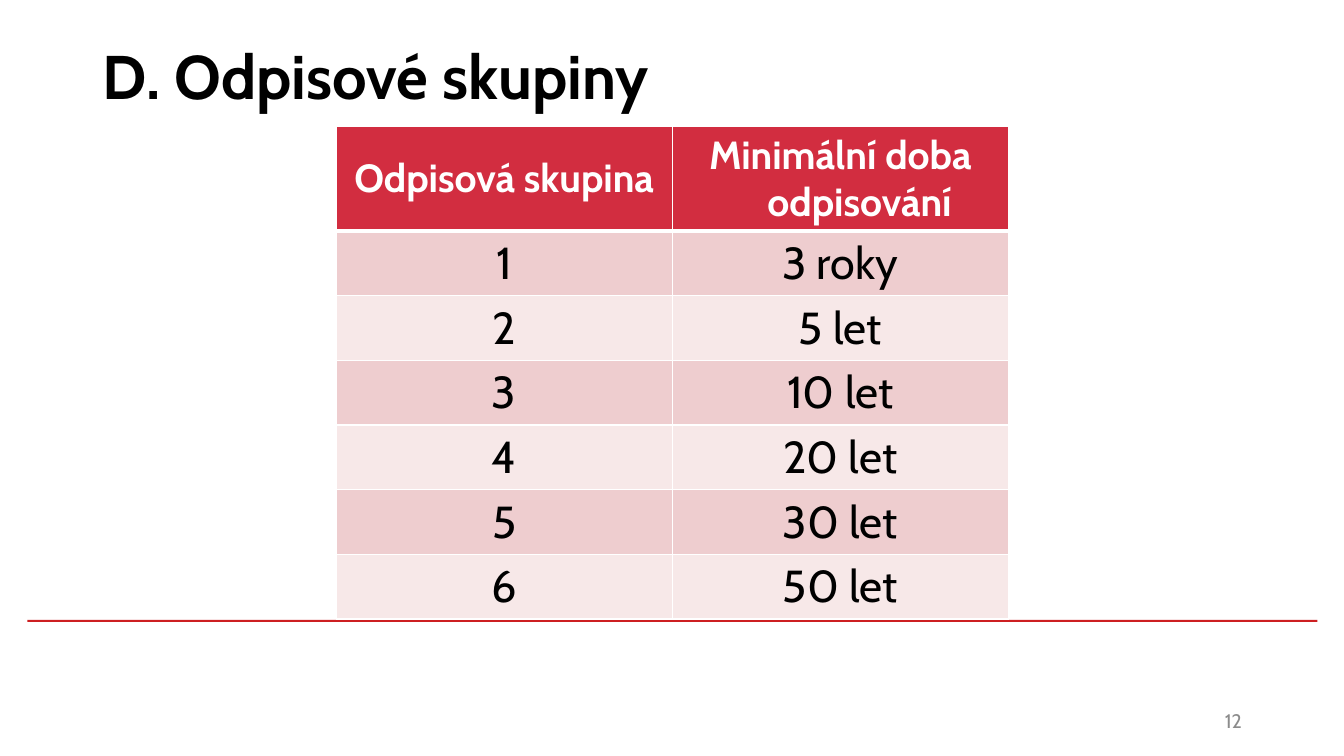
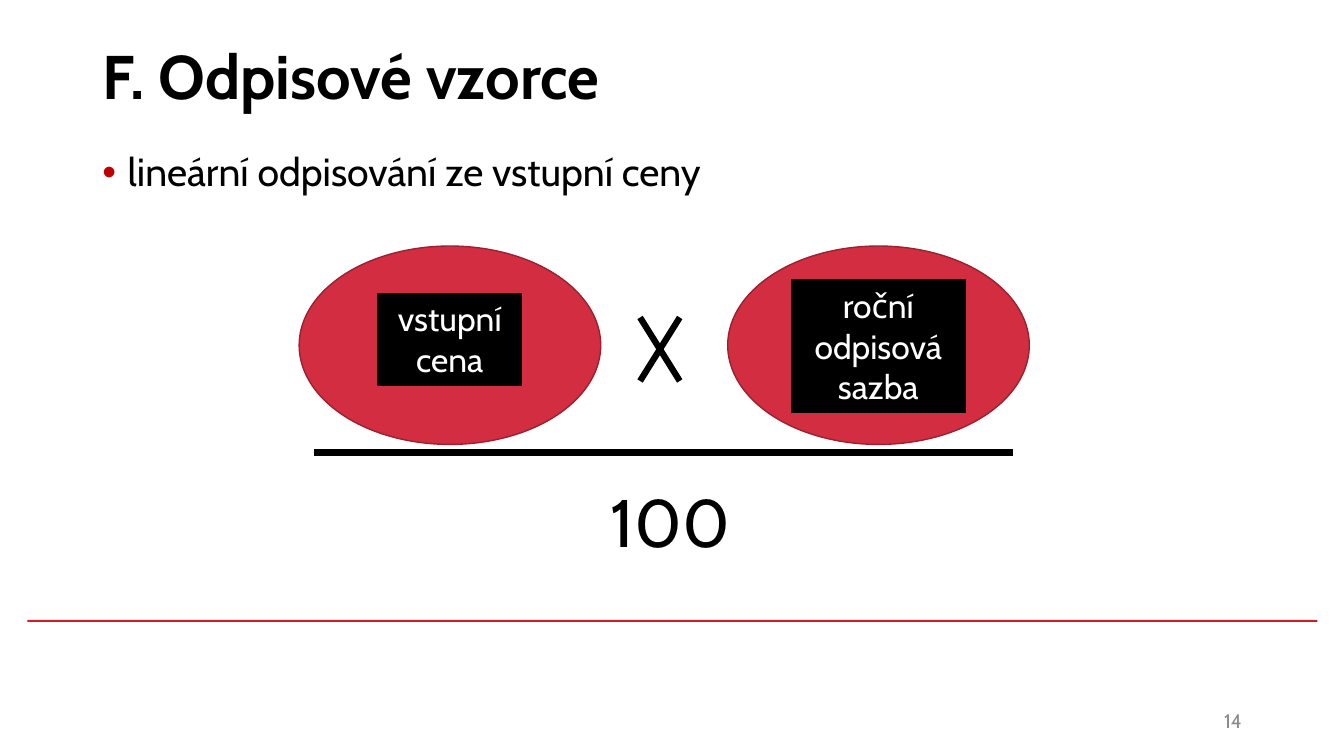
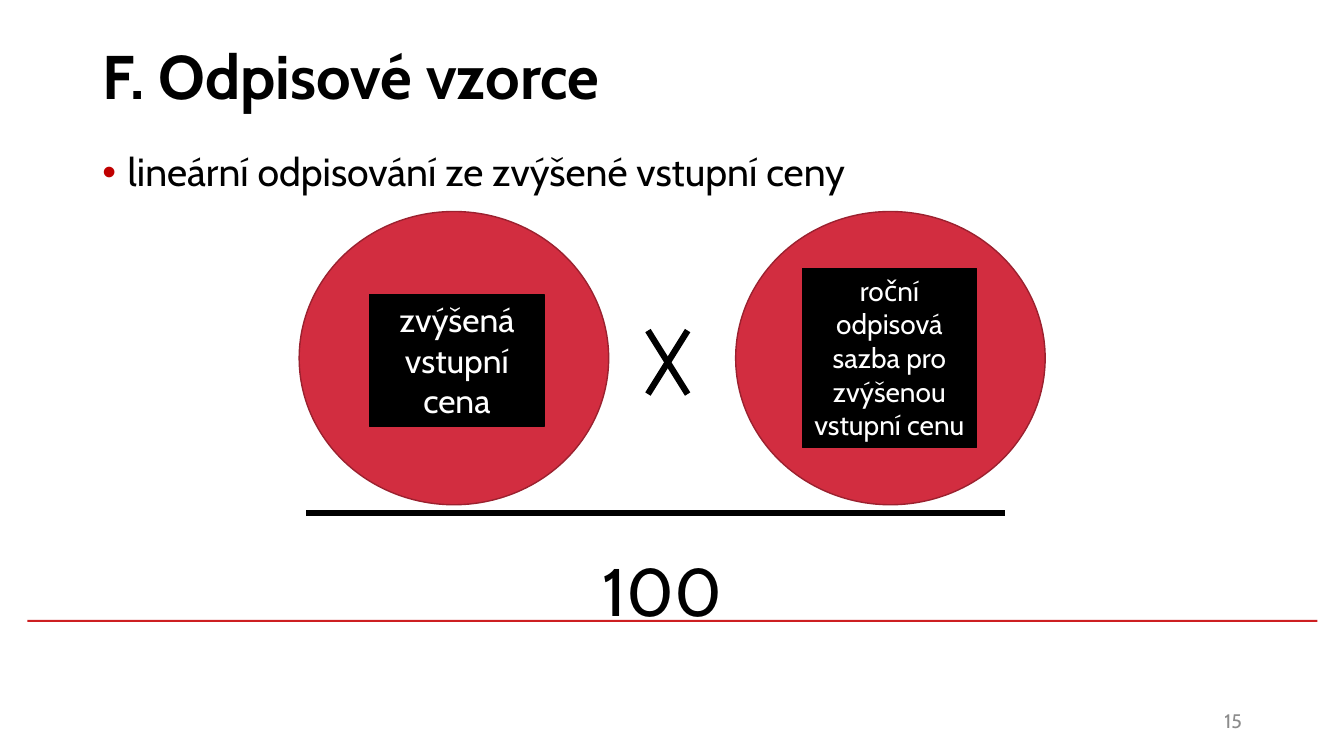
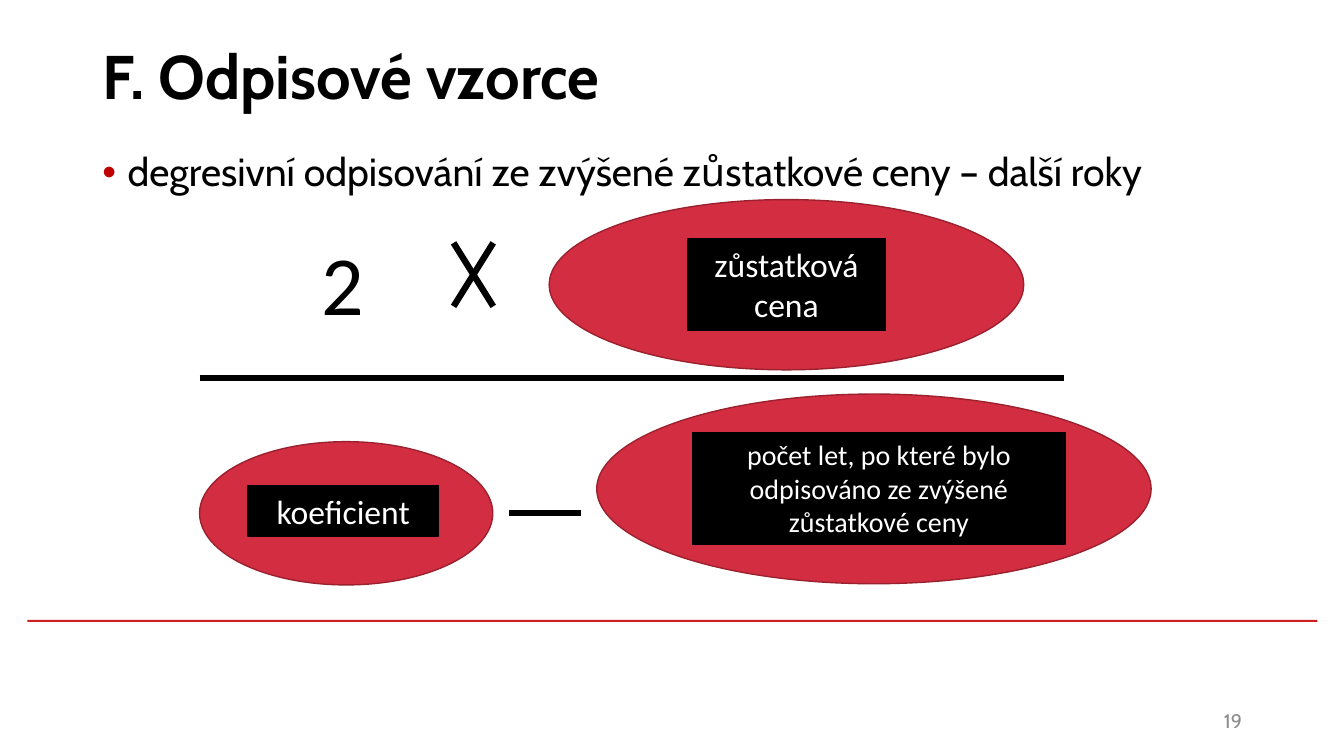
from lxml import etree
from pptx import Presentation
from pptx.dml.color import RGBColor
from pptx.enum.shapes import MSO_CONNECTOR, MSO_SHAPE
from pptx.enum.text import MSO_ANCHOR, PP_ALIGN
from pptx.oxml.ns import qn
from pptx.util import Cm, Pt

TOP, MIDDLE, BOTTOM = MSO_ANCHOR.TOP, MSO_ANCHOR.MIDDLE, MSO_ANCHOR.BOTTOM
LEFT, CENTER, RIGHT = PP_ALIGN.LEFT, PP_ALIGN.CENTER, PP_ALIGN.RIGHT
OVAL, RECTANGLE = MSO_SHAPE.OVAL, MSO_SHAPE.RECTANGLE
STRAIGHT = MSO_CONNECTOR.STRAIGHT

BLACK, WHITE, GREY = "000000", "FFFFFF", "8C8C8C"
RED, DARK_RED, RULE_RED, BULLET_RED = "D22D40", "9B212F", "CD1F21", "C00000"
ROW_TINTS = ["EECDCF", "F7E8E8"]
FONT, FORMULA_FONT = "Cabin", "Calibri"

# Boxes are (left, top, width, height) in centimetres.
TITLE_BOX = (2.33, 0.05, 29.21, 3.68)
BODY_BOX = (2.33, 3.73, 29.21, 11.61)
NUMBER_BOX = (23.93, 17.65, 7.62, 1.02)
RULE_BOX = (0.69, 15.62, 32.51, 0.05)
TABLE_LEFT, TABLE_TOP, COLUMN_WIDTH = 8.47, 3.18, 8.47
HEADER_HEIGHT, ROW_HEIGHT = 2.64, 1.63
CROSS_WIDTH, CROSS_HEIGHT = 1.0, 1.6
HANGING = 0.97

GROUPS_TITLE, GROUPS_NUMBER = "D. Odpisové skupiny", 12
GROUPS = [
    ("Odpisová skupina", "Minimální doba odpisování"),
    ("1", "3 roky"),
    ("2", "5 let"),
    ("3", "10 let"),
    ("4", "20 let"),
    ("5", "30 let"),
    ("6", "50 let"),
]

FORMULA_TITLE = "F. Odpisové vzorce"
# ovals: boxes; labels and values: text, size, box;
# cross: left, top; bars: left, right, height on the page.
FORMULAS = [
    {
        "number": 14,
        "bullet": "lineární odpisování ze vstupní ceny",
        "font": FONT,
        "ovals": [(7.54, 6.2, 7.6, 5), (18.34, 6.2, 7.6, 5)],
        "labels": [
            ("vstupní cena", 24, (9.53, 7.39, 3.61, 2.31)),
            ("roční odpisová sazba", 24, (19.94, 7.06, 4.39, 3.33)),
        ],
        "value": ("100", 48, (15.14, 11.99, 5, 2.31)),
        "cross": (16.13, 8),
        "bars": [(7.92, 25.53, 11.4)],
    },
    {
        "number": 15,
        "bullet": "lineární odpisování ze zvýšené vstupní ceny",
        "font": FONT,
        "ovals": [(7.54, 5.33, 7.8, 7.39), (18.54, 5.33, 7.8, 7.39)],
        "labels": [
            ("zvýšená vstupní cena", 24, (9.32, 7.42, 4.39, 3.33)),
            ("roční odpisová sazba pro zvýšenou vstupní cenu", 20,
             (20.22, 6.76, 4.39, 4.52)),
        ],
        "value": ("100", 48, (14.94, 13.72, 5, 2.31)),
        "cross": (16.33, 8.33),
        "bars": [(7.72, 25.32, 12.93)],
    },
    {
        "number": 19,
        "bullet": "degresivní odpisování ze zvýšené zůstatkové ceny – další roky",
        "font": FORMULA_FONT,
        "ovals": [(13.84, 5.03, 11.96, 4.29), (15.04, 9.93, 13.97, 4.78),
                  (5.03, 11.13, 7.39, 3.61)],
        "labels": [
            ("zůstatková cena", 24, (17.32, 6.02, 5, 2.31)),
            ("koeficient", 24, (6.25, 12.24, 4.8, 1.27)),
            ("počet let, po které bylo odpisováno ze zvýšené zůstatkové ceny",
             20, (17.45, 10.9, 9.4, 2.82)),
        ],
        "value": ("2", 60, (7.85, 5.72, 4.39, 2.79)),
        "cross": (11.43, 6.12),
        "bars": [(5.03, 26.82, 9.53), (12.83, 14.63, 12.93)],
    },
]


def color(value):
    return RGBColor.from_string(value)


def lengths(box):
    return [Cm(value) for value in box]


def write(frame, text, size, ink=BLACK, font=FONT, bold=False, align=LEFT,
          anchor=TOP):
    frame.word_wrap = True
    frame.vertical_anchor = anchor
    frame.text = text
    para = frame.paragraphs[0]
    para.alignment = align
    for span in para.runs:
        span.font.size = Pt(size)
        span.font.name = font
        span.font.bold = bold
        span.font.color.rgb = color(ink)
    return para


def add_text(page, box, text, size, **style):
    return write(page.shapes.add_textbox(*lengths(box)).text_frame,
                 text, size, **style)


def add_filled(page, kind, box, fill, outline=None):
    shape = page.shapes.add_shape(kind, *lengths(box))
    shape.shadow.inherit = False
    shape.fill.solid()
    shape.fill.fore_color.rgb = color(fill)
    if outline:
        shape.line.color.rgb = color(outline)
        shape.line.width = Pt(1)
    else:
        shape.line.fill.background()
    return shape


def add_stroke(page, x1, y1, x2, y2):
    stroke = page.shapes.add_connector(STRAIGHT, *lengths((x1, y1, x2, y2)))
    stroke.line.color.rgb = color(BLACK)
    stroke.line.width = Pt(4.5)
    etree.SubElement(stroke.element.spPr, qn("a:effectLst"))


def set_indent(para, hanging):
    properties = para._p.get_or_add_pPr()
    properties.set("marL", str(Cm(hanging)))
    properties.set("indent", str(-Cm(hanging)))
    return properties


def add_bullet(para):
    para.line_spacing = 0.9
    properties = set_indent(para, 0.64)
    bullet_color = etree.SubElement(properties, qn("a:buClr"))
    etree.SubElement(bullet_color, qn("a:srgbClr"), val=BULLET_RED)
    etree.SubElement(properties, qn("a:buFont"), typeface="Arial")
    etree.SubElement(properties, qn("a:buChar"), char="•")


def set_borders(cell, bottom_width):
    properties = cell._tc.get_or_add_tcPr()
    for side in "LRTB":
        width = bottom_width if side == "B" else 1
        line = etree.SubElement(properties, qn(f"a:ln{side}"), w=str(Pt(width)))
        fill = etree.SubElement(line, qn("a:solidFill"))
        etree.SubElement(fill, qn("a:srgbClr"), val=WHITE)


def add_page(deck, title, number):
    """Add a slide with the title, rule and page number all slides share."""
    page = deck.slides.add_slide(deck.slide_layouts[6])
    add_filled(page, RECTANGLE, RULE_BOX, RULE_RED)
    add_text(page, TITLE_BOX, title, 44, bold=True, anchor=MIDDLE)
    add_text(page, NUMBER_BOX, str(number), 14, ink=GREY, align=RIGHT,
             anchor=MIDDLE)
    return page


def add_groups_table(page):
    rows, columns = len(GROUPS), len(GROUPS[0])
    box = (TABLE_LEFT, TABLE_TOP, COLUMN_WIDTH * columns,
           HEADER_HEIGHT + ROW_HEIGHT * (rows - 1))
    table = page.shapes.add_table(rows, columns, *lengths(box)).table
    for r, texts in enumerate(GROUPS):
        header = r == 0
        table.rows[r].height = Cm(HEADER_HEIGHT if header else ROW_HEIGHT)
        for c, text in enumerate(texts):
            cell = table.cell(r, c)
            para = write(cell.text_frame, text, 28 if header else 32,
                         ink=WHITE if header else BLACK, bold=header,
                         align=CENTER)
            cell.vertical_anchor = MIDDLE if header and c == 0 else BOTTOM
            set_indent(para, HANGING)
            set_borders(cell, 3 if header else 1)
            cell.fill.solid()
            cell.fill.fore_color.rgb = color(
                RED if header else ROW_TINTS[(r - 1) % 2])


def add_formula(page, formula):
    add_bullet(add_text(page, BODY_BOX, formula["bullet"], 28))
    for box in formula["ovals"]:
        add_filled(page, OVAL, box, RED, DARK_RED)
    for text, size, box in formula["labels"]:
        label = add_filled(page, RECTANGLE, box, BLACK, BLACK)
        write(label.text_frame, text, size, ink=WHITE, font=formula["font"],
              align=CENTER)
    text, size, box = formula["value"]
    add_text(page, box, text, size, font=formula["font"])
    left, top = formula["cross"]
    right, bottom = left + CROSS_WIDTH, top + CROSS_HEIGHT
    add_stroke(page, left, top, right, bottom)
    add_stroke(page, right, top, left, bottom)
    for start, end, y in formula["bars"]:
        add_stroke(page, start, y, end, y)


def main():
    deck = Presentation()
    deck.slide_width, deck.slide_height = Cm(33.87), Cm(19.05)
    add_groups_table(add_page(deck, GROUPS_TITLE, GROUPS_NUMBER))
    for formula in FORMULAS:
        add_formula(add_page(deck, FORMULA_TITLE, formula["number"]), formula)
    deck.save("out.pptx")


if __name__ == "__main__":
    main()
